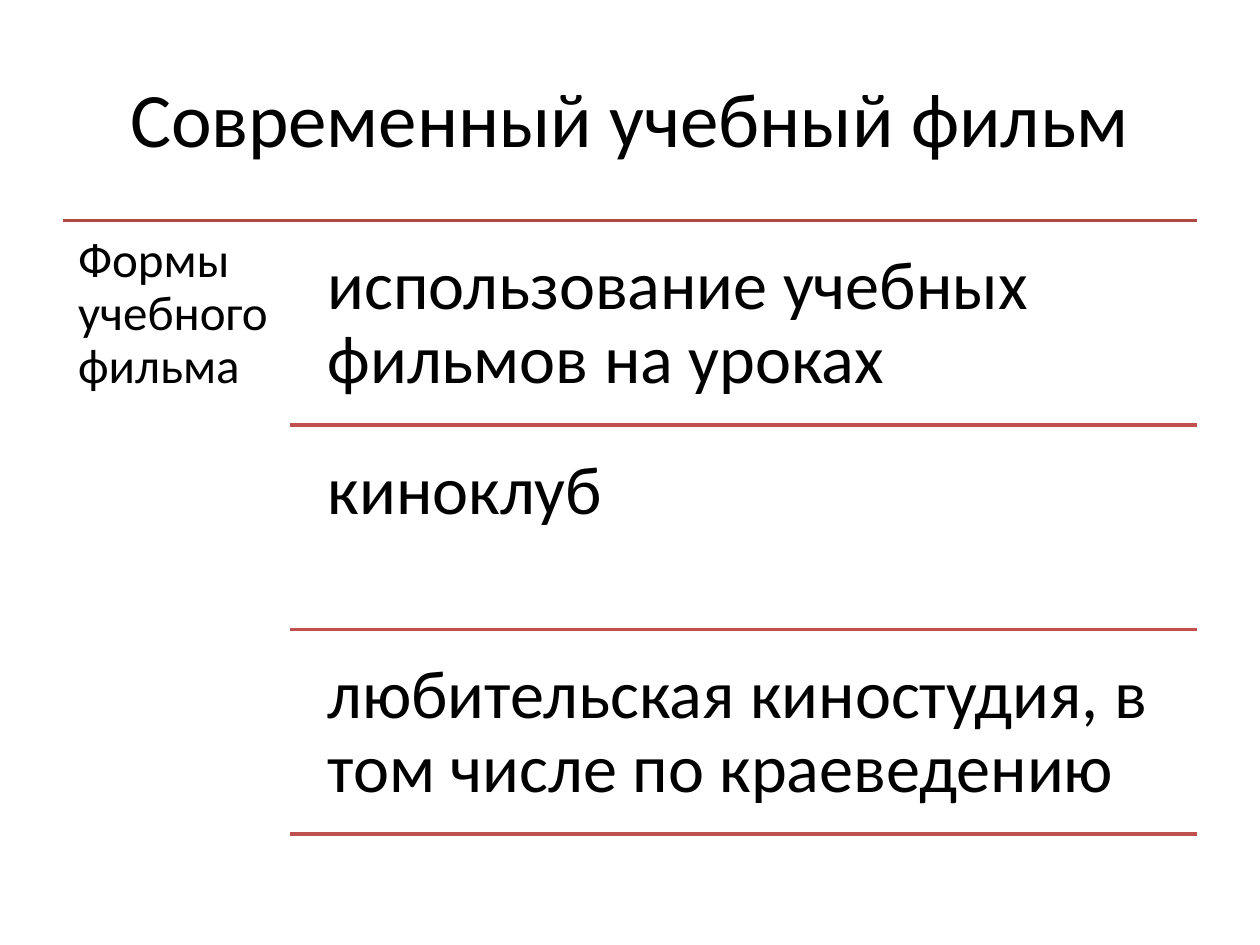
from lxml import etree
from pptx import Presentation
from pptx import util as u
from pptx.dml.color import RGBColor
from pptx.enum import shapes, text
from pptx.oxml.ns import qn

# Content
TITLE = "Современный учебный фильм"
HEADING = "Формы учебного фильма"
FORMS = [
    "использование учебных фильмов на уроках",
    "киноклуб",
    "любительская киностудия, в том числе по краеведению",
]

THEME = {
    "font": "Calibri", "ink": "000000", "top_rule": "AE4946", "rule": "C0504D",
    "title": 44, "heading": 28, "form": 39, "rule_width": 2,
}

# Layout, in inches
LEFT, RIGHT, TOP = 0.5, 9.5, 1.75
HEIGHT = 4.87
ROW = HEIGHT / len(FORMS)
RULE_LEFT, FORM_LEFT = 2.3, 2.44
FORM_GAP, FORM_HEIGHT = 0.08, 1.55


def add_text(page, words, left, top, width, height, *, size, inset=0.1, spacing=1.0,
             align=text.PP_ALIGN.LEFT, anchor=text.MSO_ANCHOR.TOP):
    box = page.shapes.add_textbox(*map(u.Inches, (left, top, width, height)))
    frame = box.text_frame
    frame.word_wrap = True
    frame.vertical_anchor = anchor
    frame.margin_left = frame.margin_right = u.Inches(inset)
    frame.margin_top = frame.margin_bottom = u.Inches(inset)
    para = frame.paragraphs[0]
    para.alignment = align
    para.line_spacing = spacing
    span = para.add_run()
    span.text = words
    span.font.name = THEME["font"]
    span.font.size = u.Pt(size)
    span.font.color.rgb = RGBColor.from_string(THEME["ink"])


def add_rule(page, left, y, color):
    rule = page.shapes.add_connector(
        shapes.MSO_CONNECTOR.STRAIGHT, *map(u.Inches, (left, y, RIGHT, y)))
    rule.line.color.rgb = RGBColor.from_string(color)
    rule.line.width = u.Pt(THEME["rule_width"])
    etree.SubElement(rule._element.spPr, qn("a:effectLst"))


def main():
    deck = Presentation()
    deck.slide_width, deck.slide_height = u.Inches(10), u.Inches(7.5)
    page = deck.slides.add_slide(deck.slide_layouts[6])

    # Title
    add_text(page, TITLE, LEFT, 0.3, RIGHT - LEFT, 1.25, size=THEME["title"],
             align=text.PP_ALIGN.CENTER, anchor=text.MSO_ANCHOR.MIDDLE)

    # Heading column under the full-width rule
    add_rule(page, LEFT, TOP, THEME["top_rule"])
    add_text(page, HEADING, LEFT, TOP, RULE_LEFT - LEFT, HEIGHT + FORM_GAP,
             size=THEME["heading"], inset=0.12, spacing=0.9)

    # One row per form, closed by a rule
    for index, form in enumerate(FORMS):
        row_top = TOP + index * ROW
        add_text(page, form, FORM_LEFT, row_top + FORM_GAP, RIGHT - FORM_LEFT,
                 FORM_HEIGHT, size=THEME["form"], inset=0.16, spacing=0.9)
        add_rule(page, RULE_LEFT, row_top + ROW, THEME["rule"])

    deck.save("out.pptx")


if __name__ == "__main__":
    main()
